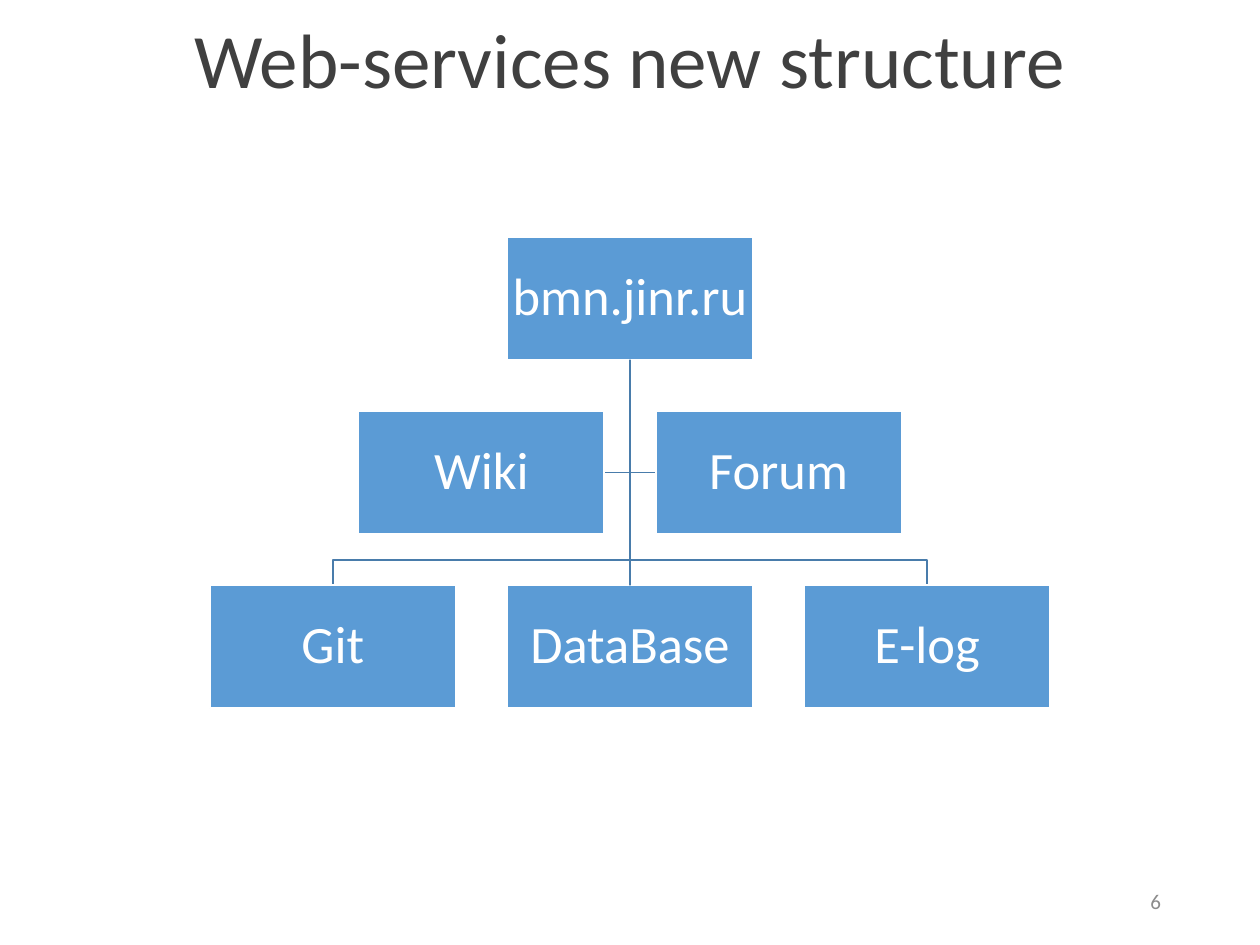
import pptx
import pptx.dml.color
import pptx.enum.shapes
import pptx.enum.text
import pptx.util
import lxml.etree

Pt = pptx.util.Pt
Align = pptx.enum.text.PP_ALIGN
LINE_COLOUR = "497CAB"
TIERS = [["bmn.jinr.ru"], ["Wiki", "Forum"], ["Git", "DataBase", "E-log"]]


def colour(value):
    """Turn a hex string into a colour."""
    return pptx.dml.color.RGBColor.from_string(value)


def format_text(shape, size, hex_colour, alignment, margins, line_spacing=1.0):
    """Format the single paragraph of a shape and centre it vertically."""
    frame = shape.text_frame
    frame.word_wrap = True
    frame.auto_size = pptx.enum.text.MSO_AUTO_SIZE.NONE
    frame.vertical_anchor = pptx.enum.text.MSO_ANCHOR.MIDDLE
    frame.margin_left = frame.margin_right = Pt(margins[0])
    frame.margin_top = frame.margin_bottom = Pt(margins[1])
    paragraph = frame.paragraphs[0]
    paragraph.alignment = alignment
    paragraph.line_spacing = line_spacing
    for run in paragraph.runs:
        run.font.name = "Calibri"
        run.font.size = Pt(size)
        run.font.color.rgb = colour(hex_colour)


def add_title(slide, text, left, top, width, height):
    """Place the slide title in its placeholder."""
    title = slide.shapes.title
    title.left, title.top = Pt(left), Pt(top)
    title.width, title.height = Pt(width), Pt(height)
    title.text_frame.text = text
    format_text(title, 44, "404040", Align.CENTER, (5, 3), 0.9)


def add_node(slide, text, left, top, width, height):
    """Add one labelled box of the structure."""
    node = slide.shapes.add_shape(
        pptx.enum.shapes.MSO_SHAPE.RECTANGLE,
        Pt(left), Pt(top), Pt(width), Pt(height))
    node.shadow.inherit = False
    node.fill.solid()
    node.fill.fore_color.rgb = colour("5B9BD5")
    node.line.color.rgb = colour("FFFFFF")
    node.line.width = Pt(1)
    node.text_frame.text = text
    format_text(node, 30, "FFFFFF", Align.CENTER, (1.5, 1.5), 0.9)
    return node


def add_branch(slide, points):
    """Add an open bent line through the given points."""
    start, *others = [(Pt(x), Pt(y)) for x, y in points]
    builder = slide.shapes.build_freeform(*start)
    builder.add_line_segments(others, close=False)
    branch = builder.convert_to_shape()
    branch.shadow.inherit = False
    branch.fill.background()
    branch.line.color.rgb = colour(LINE_COLOUR)
    branch.line.width = Pt(1)


def add_trunk(slide, parent, child):
    """Join the bottom of one box to the top of another."""
    trunk = slide.shapes.add_connector(
        pptx.enum.shapes.MSO_CONNECTOR.STRAIGHT, 0, 0, 0, 0)
    trunk.begin_connect(parent, 2)
    trunk.end_connect(child, 0)
    trunk.line.color.rgb = colour(LINE_COLOUR)
    trunk.line.width = Pt(1)
    lxml.etree.SubElement(
        trunk._element.spPr, pptx.oxml.ns.qn("a:effectLst"))


def add_structure(slide, left, top, width, height, gap=29.4):
    """Draw the tiers of boxes and the lines from the root box."""
    box_width = (width - 2 * gap) / 3
    box_height = (height - 2 * gap) / 3
    centre = left + width / 2
    root_bottom = top + box_height
    assistant_middle = top + 1.5 * box_height + gap
    children_top = top + 2 * (box_height + gap)
    bus = children_top - gap / 2
    for side in (1, -1):
        add_branch(slide, [(centre, root_bottom), (centre, assistant_middle),
                           (centre + side * gap / 2, assistant_middle)])
        child = centre + side * (box_width + gap)
        add_branch(slide, [(centre, root_bottom), (centre, bus),
                           (child, bus), (child, children_top)])
    nodes = {}
    for row, names in enumerate(TIERS):
        row_left = centre - (len(names) * (box_width + gap) - gap) / 2
        for column, name in enumerate(names):
            nodes[name] = add_node(
                slide, name, row_left + column * (box_width + gap),
                top + row * (box_height + gap), box_width, box_height)
    add_trunk(slide, nodes["bmn.jinr.ru"], nodes["DataBase"])


def add_page_number(slide, text, left, top, width, height):
    """Add the page number at the lower right."""
    box = slide.shapes.add_textbox(Pt(left), Pt(top), Pt(width), Pt(height))
    box.text_frame.text = text
    format_text(box, 12, "8C8C8C", Align.RIGHT, (7.2, 3.6))


def main():
    """Build and save the presentation."""
    presentation = pptx.Presentation()
    presentation.slide_width, presentation.slide_height = Pt(720), Pt(540)
    slide = presentation.slides.add_slide(presentation.slide_layouts[5])
    add_title(slide, "Web-services new structure", 0, 0, 720, 72.7)
    add_structure(slide, 120, 135.3, 480, 269.4)
    add_page_number(slide, "6", 508.5, 500.5, 162, 28.8)
    presentation.save("out.pptx")


if __name__ == "__main__":
    main()
